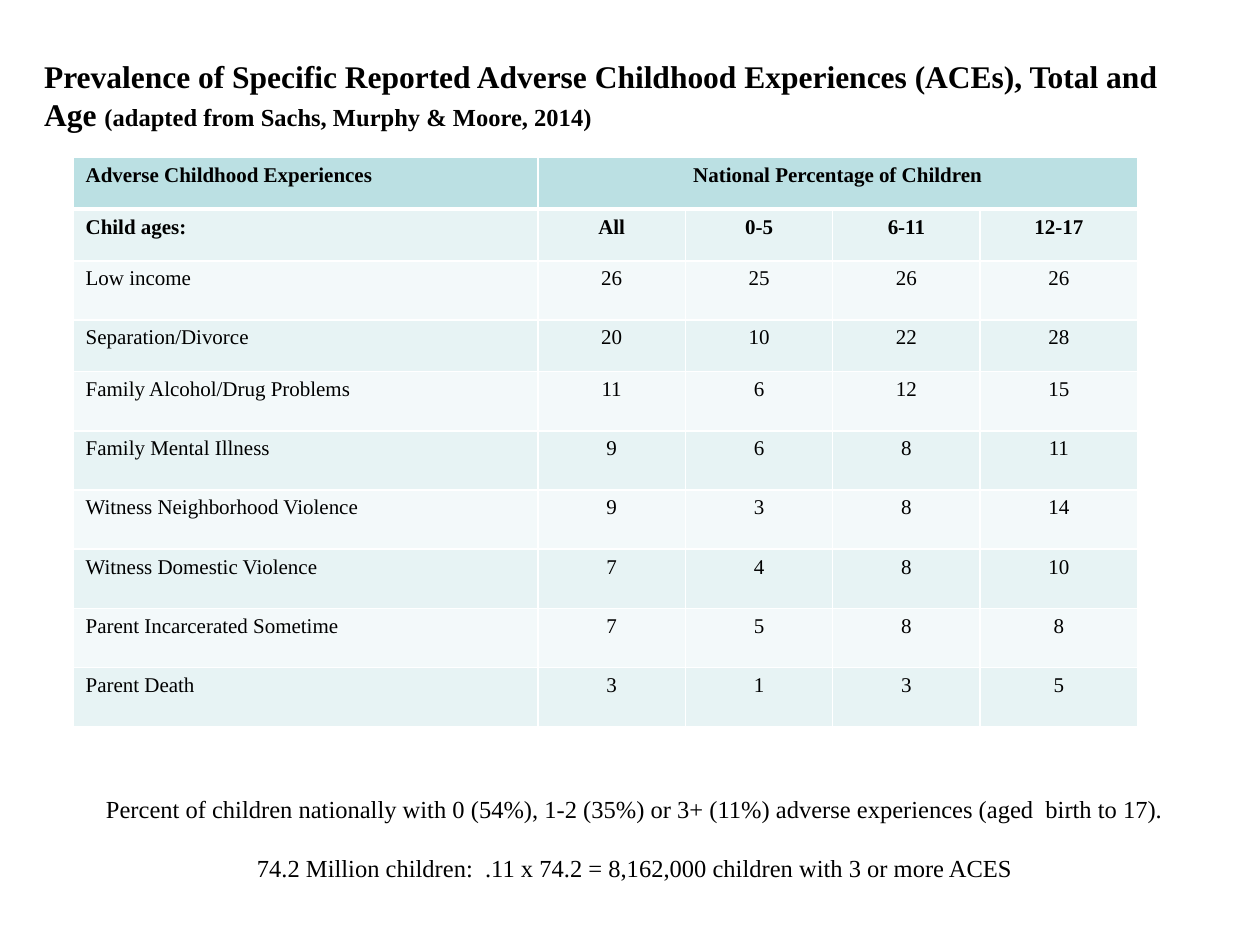
import pptx
import pptx.dml.color
import pptx.enum.text
import pptx.oxml.ns
import pptx.util
from lxml import etree

Inches = pptx.util.Inches
Pt = pptx.util.Pt
ALIGN = pptx.enum.text.PP_ALIGN
ANCHOR = pptx.enum.text.MSO_ANCHOR
AUTO_SIZE = pptx.enum.text.MSO_AUTO_SIZE

COLORS = {
    "text": "000000",
    "border": "FFFFFF",
    "header": "BBE0E3",
    "odd_row": "E7F3F4",
    "even_row": "F3F9FA",
}
FONT = "Times New Roman"

COLUMN_WIDTHS = [3.69, 1.17, 1.17, 1.17, 1.25]
SHORT_ROW, TALL_ROW = 0.41, 0.47
SHORT_ROWS = {0, 1, 3}
BOLD_ROWS = {0, 1}

TABLE_ROWS = [
    ["Adverse Childhood Experiences", "National Percentage of Children"],
    ["Child ages:", "All", "0-5", "6-11", "12-17"],
    ["Low income", 26, 25, 26, 26],
    ["Separation/Divorce", 20, 10, 22, 28],
    ["Family Alcohol/Drug Problems", 11, 6, 12, 15],
    ["Family Mental Illness", 9, 6, 8, 11],
    ["Witness Neighborhood Violence", 9, 3, 8, 14],
    ["Witness Domestic Violence", 7, 4, 8, 10],
    ["Parent Incarcerated Sometime", 7, 5, 8, 8],
    ["Parent Death", 3, 1, 3, 5],
]
SUMMARY = [
    "Percent of children nationally with 0 (54%), 1-2 (35%) or 3+ (11%) "
    "adverse experiences (aged  birth to 17).",
    "74.2 Million children:  .11 x 74.2 = 8,162,000 children with 3 or more ACES",
]


def rgb(name):
    return pptx.dml.color.RGBColor.from_string(COLORS[name])


def add_run(paragraph, text, size, bold=False):
    run = paragraph.add_run()
    run.text = text
    formats = {"name": FONT, "size": Pt(size), "bold": bold}
    for attribute, value in formats.items():
        setattr(run.font, attribute, value)
    run.font.color.rgb = rgb("text")


def add_title(slide):
    title = slide.shapes.title
    place = {"left": 0.25, "top": 0.42, "width": 9.08, "height": 0.67}
    for attribute, value in place.items():
        setattr(title, attribute, Inches(value))
    frame = title.text_frame
    formats = {"auto_size": AUTO_SIZE.NONE, "vertical_anchor": ANCHOR.MIDDLE}
    for attribute, value in formats.items():
        setattr(frame, attribute, value)
    paragraph = frame.paragraphs[0]
    paragraph.alignment = ALIGN.LEFT
    add_run(paragraph, "Prevalence of Specific Reported Adverse Childhood "
            "Experiences (ACEs), Total and Age ", 18, True)
    add_run(paragraph, "(adapted from Sachs, Murphy & Moore, 2014)", 14, True)


def set_borders(cell, widths):
    properties = cell._tc.get_or_add_tcPr()
    qn = pptx.oxml.ns.qn
    for side, width in widths.items():
        line = etree.SubElement(properties, qn(f"a:ln{side}"), w=str(Pt(width)))
        fill = etree.SubElement(line, qn("a:solidFill"))
        etree.SubElement(fill, qn("a:srgbClr"), val=COLORS["border"])


def format_cell(cell, row):
    # A heavier rule separates the header from the body
    set_borders(cell, {"L": 1, "R": 1, "T": 3 if row == 1 else 1,
                       "B": 3 if row == 0 else 1})
    cell.fill.solid()
    band = "odd_row" if row % 2 else "even_row"
    cell.fill.fore_color.rgb = rgb("header" if row == 0 else band)


def add_prevalence_table(slide):
    heights = [SHORT_ROW if row in SHORT_ROWS else TALL_ROW
               for row in range(len(TABLE_ROWS))]
    table = slide.shapes.add_table(
        len(heights), len(COLUMN_WIDTHS), Inches(0.58), Inches(1.25),
        Inches(sum(COLUMN_WIDTHS)), Inches(sum(heights))).table
    for column, width in zip(table.columns, COLUMN_WIDTHS):
        column.width = Inches(width)
    table.cell(0, 1).merge(table.cell(0, len(COLUMN_WIDTHS) - 1))

    for row, (height, values) in enumerate(zip(heights, TABLE_ROWS)):
        table.rows[row].height = Inches(height)
        for cell in table.rows[row].cells:
            format_cell(cell, row)
        for column, value in enumerate(values):
            paragraph = table.cell(row, column).text_frame.paragraphs[0]
            paragraph.alignment = ALIGN.CENTER if column else ALIGN.LEFT
            add_run(paragraph, str(value), 12, row in BOLD_ROWS)


def add_summary(slide):
    box = slide.shapes.add_textbox(
        Inches(0.58), Inches(6.25), Inches(8.92), Inches(0.81))
    frame = box.text_frame
    frame.word_wrap = True
    for index, text in enumerate(SUMMARY):
        paragraph = frame.add_paragraph() if index else frame.paragraphs[0]
        paragraph.alignment = ALIGN.CENTER
        if index:
            paragraph.space_before = Pt(17)
        add_run(paragraph, text, 14)


def main():
    presentation = pptx.Presentation()
    presentation.slide_width = Inches(10)
    presentation.slide_height = Inches(7.5)
    title_only = presentation.slide_layouts[5]
    slide = presentation.slides.add_slide(title_only)

    add_title(slide)
    add_prevalence_table(slide)
    add_summary(slide)
    presentation.save("out.pptx")


if __name__ == "__main__":
    main()
